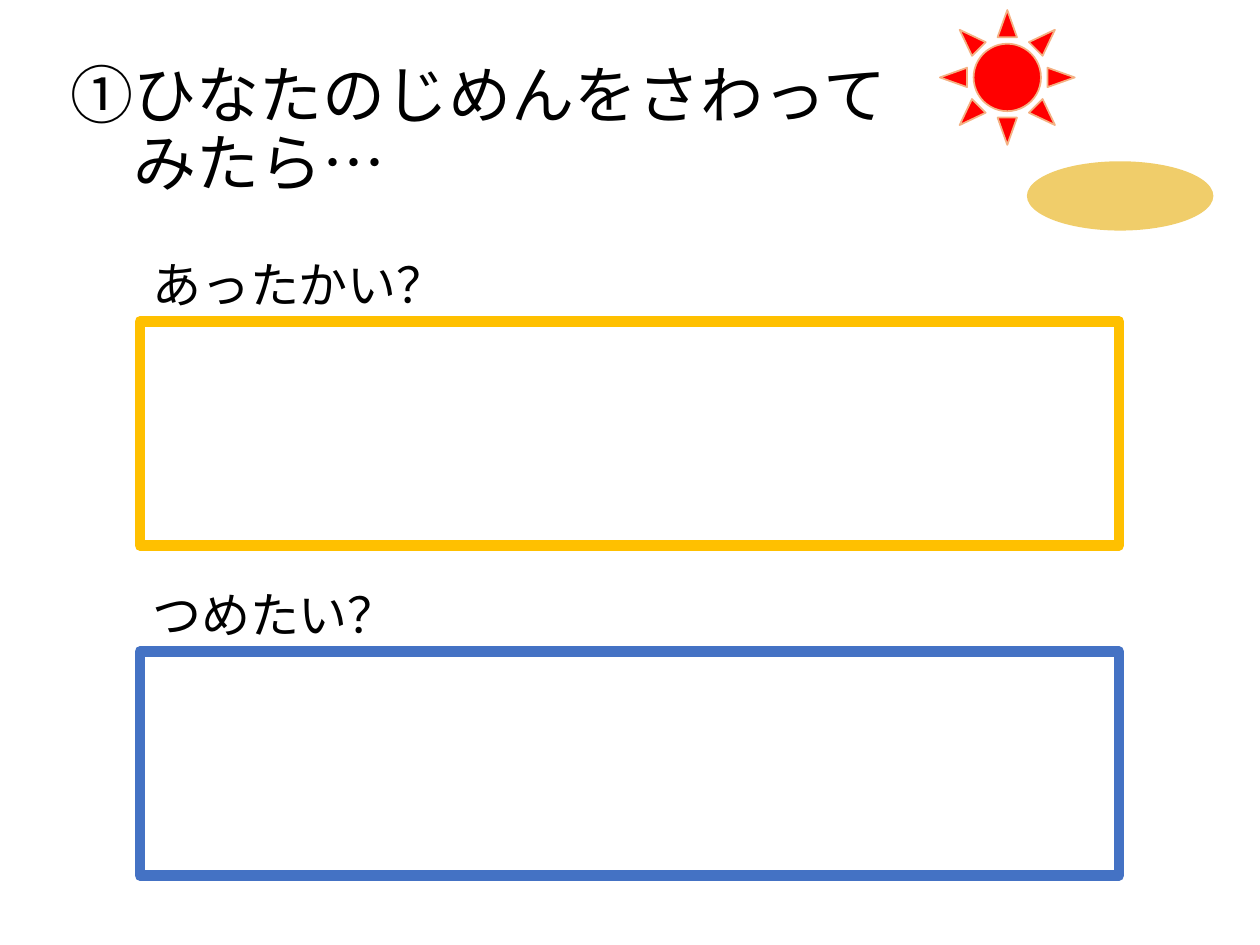
from dataclasses import dataclass
from typing import Optional

from lxml.etree import SubElement
from pptx import Presentation
from pptx.dml.color import RGBColor
from pptx.enum.shapes import MSO_SHAPE as Kind
from pptx.enum.text import MSO_ANCHOR as Anchor, PP_ALIGN as Align
from pptx.oxml.ns import qn
from pptx.util import Inches, Pt

FONT = "Noto Sans CJK JP"
BLACK = RGBColor(0, 0, 0)
WHITE = RGBColor(255, 255, 255)
GOLD = RGBColor(0xFF, 0xC0, 0x00)
BLUE = RGBColor(0x44, 0x72, 0xC4)
RED = RGBColor(0xFF, 0x00, 0x00)
PEACH = RGBColor(0xF4, 0xB1, 0x83)
SAND = RGBColor(0xF0, 0xCD, 0x6A)


@dataclass
class Form:
    kind: Kind
    box: tuple[float, float, float, float]
    fill: RGBColor
    line: Optional[RGBColor] = None
    width: float = 1


@dataclass
class Field:
    label: str
    top: float
    wide: float
    color: RGBColor


FIELDS = [
    Field("あったかい？", 1.97, 2.56, GOLD),
    Field("つめたい？", 4.59, 2.17, BLUE),
]
DECOR = [
    Form(Kind.SUN, (7.46, 0.08, 1.07, 1.07), RED, PEACH),
    Form(Kind.OVAL, (8.15, 1.28, 1.48, 0.55), SAND),
]


def draw(slide, form: Form) -> None:
    shape = slide.shapes.add_shape(form.kind, *map(Inches, form.box))
    shape.shadow.inherit = False
    shape.fill.solid()
    shape.fill.fore_color.rgb = form.fill
    if form.line is None:
        shape.line.fill.background()
    else:
        shape.line.color.rgb = form.line
        shape.line.width = Pt(form.width)


def write(frame, lines: list[str], size: int, space: float) -> None:
    for i, text in enumerate(lines):
        para = frame.paragraphs[0] if i == 0 else frame.add_paragraph()
        for key, value in {"alignment": Align.LEFT, "line_spacing": space}.items():
            setattr(para, key, value)
        run = para.add_run()
        run.text = text
        for key, value in {"size": Pt(size), "name": FONT}.items():
            setattr(run.font, key, value)
        run.font.color.rgb = BLACK
        SubElement(run.font._element, qn("a:ea"), typeface=FONT)


def ask(slide, field: Field) -> None:
    left, high = 1.11, 0.57
    draw(slide, Form(Kind.RECTANGLE, (left, field.top + high + 0.01, 7.77, 1.78),
                     WHITE, field.color, 6))
    box = slide.shapes.add_textbox(*map(Inches, (left, field.top, field.wide, high)))
    box.text_frame.word_wrap = False
    write(box.text_frame, [field.label], 28, 1)


def main() -> None:
    deck = Presentation()
    deck.slide_width, deck.slide_height = Inches(10), Inches(7.5)
    slide = deck.slides.add_slide(deck.slide_layouts[5])
    title = slide.shapes.title
    place = {"left": 0.46, "top": 0.39, "width": 9.08, "height": 1.31}
    for key, value in place.items():
        setattr(title, key, Inches(value))
    title.text_frame.vertical_anchor = Anchor.MIDDLE
    write(title.text_frame, ["①ひなたのじめんをさわって", "　みたら…"], 36, 0.9)
    for field in FIELDS:
        ask(slide, field)
    for form in DECOR:
        draw(slide, form)
    deck.save("out.pptx")


if __name__ == "__main__":
    main()
